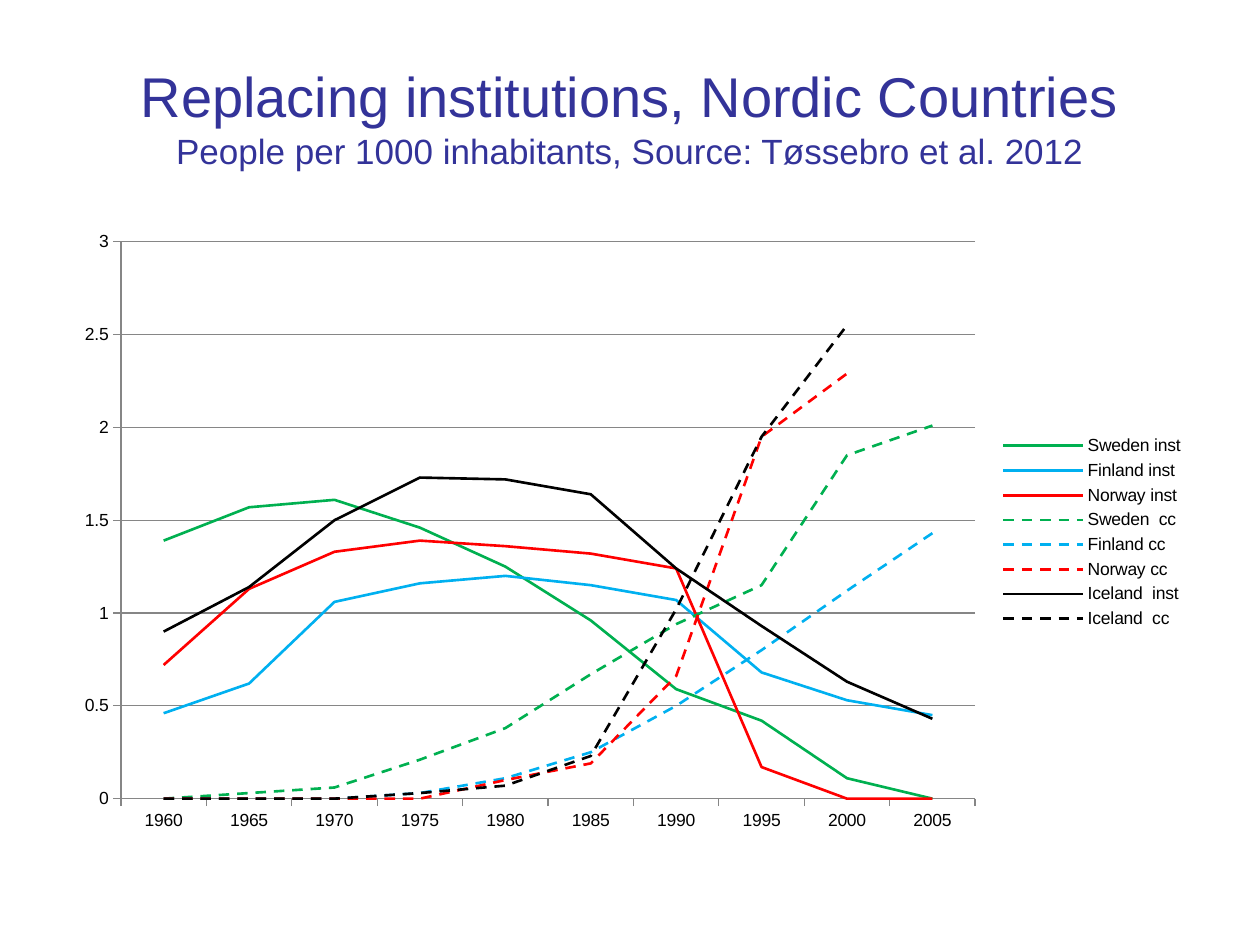
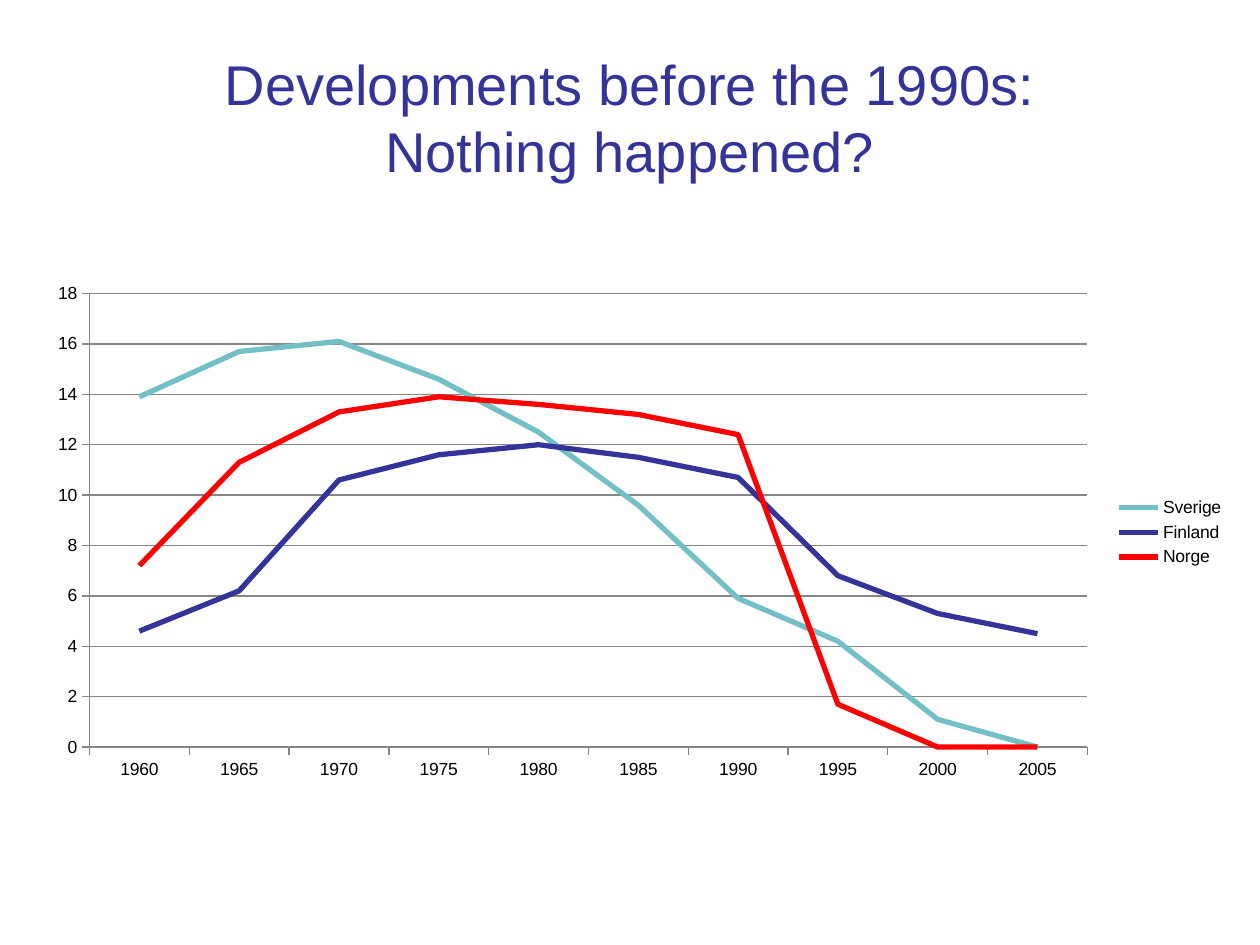
from lxml import etree
from pptx import Presentation
from pptx.chart.data import CategoryChartData
from pptx.dml.color import RGBColor
from pptx.enum.chart import XL_CHART_TYPE, XL_LEGEND_POSITION, XL_MARKER_STYLE, XL_TICK_MARK
from pptx.enum.dml import MSO_LINE
from pptx.enum.text import MSO_ANCHOR, MSO_AUTO_SIZE, PP_ALIGN
from pptx.oxml.ns import qn
from pptx.util import Inches, Pt

LINE = XL_CHART_TYPE.LINE
RIGHT = XL_LEGEND_POSITION.RIGHT
BARE = XL_MARKER_STYLE.NONE
OUT, NO_TICK = XL_TICK_MARK.OUTSIDE, XL_TICK_MARK.NONE
DASH = MSO_LINE.DASH
MIDDLE, CENTER = MSO_ANCHOR.MIDDLE, PP_ALIGN.CENTER
FIXED = MSO_AUTO_SIZE.NONE

FONT = "Arial"
NAVY, BLACK, GREY = "333399", "000000", "868686"
GREEN, SKY, RED, TEAL = "00B050", "00B0F0", "FF0000", "72BFC5"
HEAD_BOX = (0.5, 0.3, 9, 1.25)
YEARS = [str(year) for year in range(1960, 2006, 5)]

NORDIC = [
    ("Sweden inst", GREEN, False, [1.39, 1.57, 1.61, 1.46, 1.25, 0.96, 0.59, 0.42, 0.11, 0]),
    ("Finland inst", SKY, False, [0.46, 0.62, 1.06, 1.16, 1.2, 1.15, 1.07, 0.68, 0.53, 0.45]),
    ("Norway inst", RED, False, [0.72, 1.13, 1.33, 1.39, 1.36, 1.32, 1.24, 0.17, 0, 0]),
    ("Sweden  cc", GREEN, True, [0, 0.03, 0.06, 0.21, 0.38, 0.67, 0.94, 1.15, 1.85, 2.01]),
    ("Finland cc", SKY, True, [0, 0, 0, 0.03, 0.11, 0.25, 0.5, 0.8, 1.12, 1.43]),
    ("Norway cc", RED, True, [0, 0, 0, 0, 0.1, 0.19, 0.66, 1.95, 2.29, None]),
    ("Iceland  inst", BLACK, False, [0.9, 1.14, 1.5, 1.73, 1.72, 1.64, 1.24, 0.93, 0.63, 0.43]),
    ("Iceland  cc", BLACK, True, [0, 0, 0, 0.03, 0.07, 0.23, 1.02, 1.95, 2.55, None]),
]
EARLY = [
    ("Sverige", TEAL, False, [13.9, 15.7, 16.1, 14.6, 12.5, 9.6, 5.9, 4.2, 1.1, 0]),
    ("Finland", NAVY, False, [4.6, 6.2, 10.6, 11.6, 12, 11.5, 10.7, 6.8, 5.3, 4.5]),
    ("Norge", RED, False, [7.2, 11.3, 13.3, 13.9, 13.6, 13.2, 12.4, 1.7, 0, 0]),
]


def paint(part, color):
    """Colour a font or a fill with a hex string."""
    target = part.color if hasattr(part, "color") else part.fore_color
    target.rgb = RGBColor.from_string(color)


def stroke(line, color, width):
    """Give a line a solid colour and a width in points."""
    line.fill.solid()
    paint(line.fill, color)
    line.width = Pt(width)


def add_title(slide, box, rows):
    """Fill the title with rows of text and size."""
    title = slide.shapes.title
    title.left, title.top, title.width, title.height = map(Inches, box)
    frame = title.text_frame
    frame.word_wrap = True
    frame.auto_size = FIXED
    frame.vertical_anchor = MIDDLE
    para = frame.paragraphs[0]
    para.alignment = CENTER
    for index, (text, size) in enumerate(rows):
        if index:
            para.add_line_break()
        run = para.add_run()
        run.text = text
        run.font.name = FONT
        run.font.size = Pt(size)
        paint(run.font, NAVY)


def set_plot(chart, box, plot):
    """Fix the inner plot area, given in inches from the chart's corner."""
    area = chart.plots[0]._element.getparent()
    for old in area.findall(qn("c:layout")):
        area.remove(old)
    layout = etree.Element(qn("c:layout"))
    area.insert(0, layout)
    manual = etree.SubElement(layout, qn("c:manualLayout"))
    rules = [("layoutTarget", "inner"), ("xMode", "edge"), ("yMode", "edge")]
    spans = [box[2], box[3]] * 2
    rules += [(key, f"{size / span:.4f}") for key, size, span in zip("xywh", plot, spans)]
    for key, value in rules:
        etree.SubElement(manual, qn(f"c:{key}")).set("val", value)


def add_lines(slide, box, plot, rows, width, top, step):
    """Draw a line chart with its legend inside the box."""
    data = CategoryChartData()
    data.categories = YEARS
    for name, _, _, values in rows:
        data.add_series(name, values)
    chart = slide.shapes.add_chart(LINE, *map(Inches, box), data).chart
    chart.has_title = False
    chart.font.name = FONT
    chart.font.size = Pt(10)
    paint(chart.font, BLACK)
    chart.has_legend = True
    chart.legend.position = RIGHT
    chart.legend.include_in_layout = False
    chart.plots[0].vary_by_categories = False
    for series, (_, color, dashed, _) in zip(chart.plots[0].series, rows):
        series.smooth = False
        series.marker.style = BARE
        stroke(series.format.line, color, width)
        if dashed:
            series.format.line.dash_style = DASH
    scale = chart.value_axis
    scale.minimum_scale, scale.maximum_scale, scale.major_unit = 0, top, step
    scale.has_major_gridlines = True
    stroke(scale.major_gridlines.format.line, GREY, 0.75)
    for axis in (scale, chart.category_axis):
        axis.major_tick_mark, axis.minor_tick_mark = OUT, NO_TICK
        stroke(axis.format.line, GREY, 0.75)
    set_plot(chart, box, plot)


def add_slide(deck, head, **lines):
    """Add a slide with a title above a line chart."""
    slide = deck.slides.add_slide(deck.slide_layouts[5])
    add_title(slide, HEAD_BOX, head)
    add_lines(slide, **lines)


def main():
    """Build both slides and save the deck."""
    deck = Presentation()
    deck.slide_width, deck.slide_height = Inches(10), Inches(7.5)
    add_slide(
        deck,
        [("Replacing institutions, Nordic Countries", 32),
         ("People per 1000 inhabitants, Source: Tøssebro et al. 2012", 20)],
        box=(0.5, 1.75, 9, 4.95), plot=(0.46, 0.17, 6.78, 4.42),
        rows=NORDIC, width=1.5, top=3, step=0.5,
    )
    add_slide(
        deck,
        [("Developments before the 1990s:", 32), ("Nothing happened?", 32)],
        box=(0.28, 2.18, 9.54, 4.09), plot=(0.43, 0.15, 7.92, 3.6),
        rows=EARLY, width=3, top=18, step=2,
    )
    deck.save("out.pptx")


if __name__ == "__main__":
    main()
